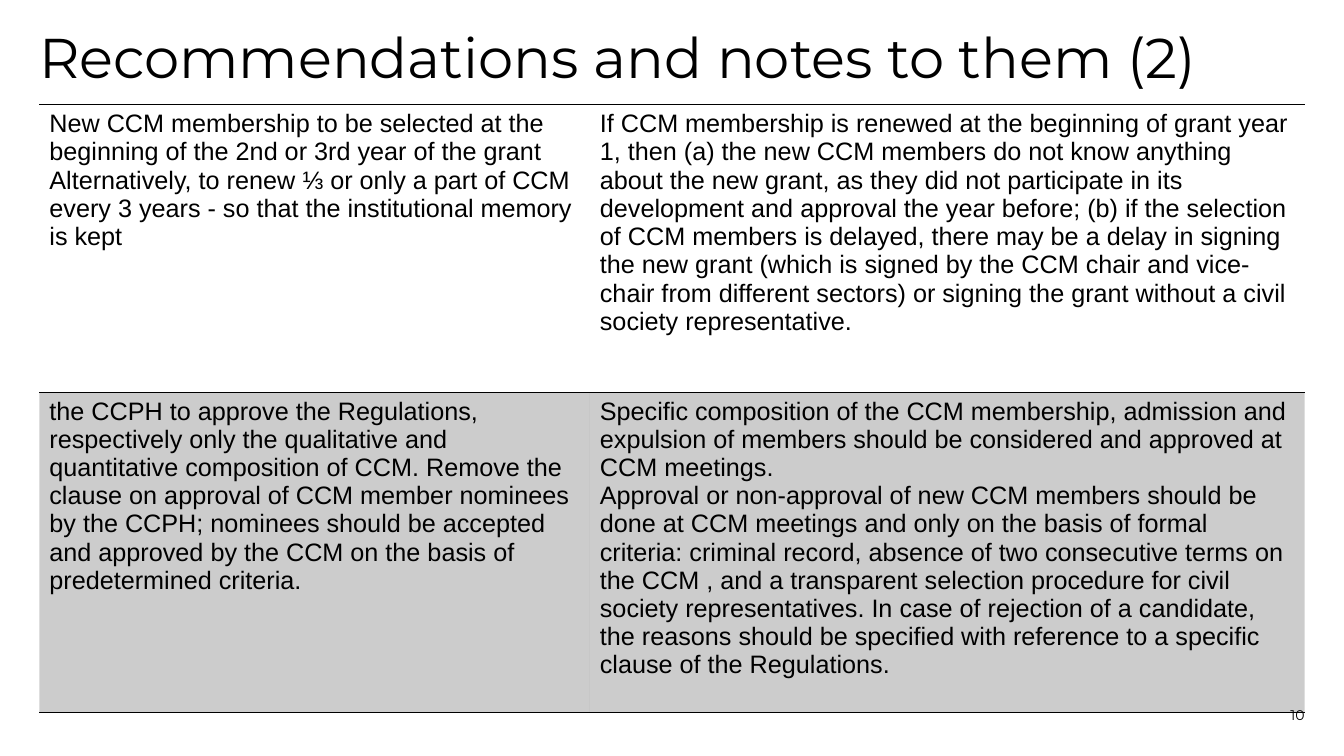
from lxml.etree import SubElement as Sub
from pptx import Presentation
from pptx.dml.color import RGBColor
from pptx.enum.text import MSO_ANCHOR as Anchor, PP_ALIGN as Align
from pptx.oxml.ns import qn
from pptx.util import Inches, Pt

BLACK = RGBColor(0, 0, 0)
HEAD, BODY = "Montserrat", "Arial"
LEFT, WIDE = 0.39, 12.55
COLS = [5.46, 7.09]
ROWS = [2.85, 3.18]

NOTES = [
    [
        ["New CCM membership to be selected at the beginning of the 2nd or 3rd "
         "year of the grant",
         "Alternatively, to renew ⅓ or only a part of CCM every 3 years - so that "
         "the institutional memory is kept"],
        ["If CCM membership is renewed at the beginning of grant year 1, then "
         "(a) the new CCM members do not know anything about the new grant, as "
         "they did not participate in its development and approval the year "
         "before; (b) if the selection of CCM members is delayed, there may be a "
         "delay in signing the new grant (which is signed by the CCM chair and "
         "vice-chair from different sectors) or signing the grant without a civil "
         "society representative."],
    ],
    [
        ["the CCPH to approve the Regulations, respectively only the qualitative "
         "and quantitative composition of CCM. Remove the clause on approval of "
         "CCM member nominees by the CCPH; nominees should be accepted and "
         "approved by the CCM on the basis of predetermined criteria."],
        ["Specific composition of the CCM membership, admission and expulsion of "
         "members should be considered and approved at CCM meetings.",
         "Approval or non-approval of new CCM members should be done at CCM "
         "meetings and only on the basis of formal criteria: criminal record, "
         "absence of two consecutive terms on the CCM , and a transparent "
         "selection procedure for civil society representatives. In case of "
         "rejection of a candidate, the reasons should be specified with "
         "reference to a specific clause of the Regulations."],
    ],
]


def write(frame, lines, font=BODY, size=18, align=Align.LEFT, space=1.0):
    """Fill a text frame with one paragraph per line."""
    frame.word_wrap = True
    for i, line in enumerate(lines):
        par = frame.add_paragraph() if i else frame.paragraphs[0]
        par.alignment, par.line_spacing = align, space
        run = par.add_run()
        run.text = line
        run.font.name, run.font.size = font, Pt(size)
        run.font.color.rgb = BLACK


def rule(cell, sides):
    """Draw black 1 pt borders on the given sides and none on the others."""
    props = cell._tc.get_or_add_tcPr()
    for i, side in enumerate("LRTB"):
        line = props.makeelement(qn("a:ln" + side), {"w": str(Pt(1))})
        props.insert(i, line)
        if side in sides:
            fill = Sub(line, qn("a:solidFill"))
            Sub(fill, qn("a:srgbClr"), val=str(BLACK))
        else:
            Sub(line, qn("a:noFill"))


def shade(cell, alpha):
    """Fill a cell with black of the given opacity in percent."""
    cell.fill.solid()
    cell.fill.fore_color.rgb = BLACK
    color = cell._tc.tcPr.find(".//" + qn("a:srgbClr"))
    Sub(color, qn("a:alpha"), val=str(alpha * 1000))


class Page:
    def __init__(self, deck):
        self.slide = deck.slides.add_slide(deck.slide_layouts[5])

    def frame(self, shape, anchor):
        frame = shape.text_frame
        frame.margin_left = frame.margin_right = 0
        frame.margin_top = frame.margin_bottom = 0
        frame.vertical_anchor = anchor
        return frame

    def title(self, text):
        shape = self.slide.shapes.title
        shape.left, shape.top = Inches(LEFT), Inches(0.3)
        shape.width, shape.height = Inches(WIDE), Inches(0.74)
        write(self.frame(shape, Anchor.TOP), [text], font=HEAD, size=40, space=0.9)

    def number(self, text):
        box = self.slide.shapes.add_textbox(
            Inches(11.96), Inches(6.78), Inches(0.98), Inches(0.4))
        write(self.frame(box, Anchor.BOTTOM), [text], font=HEAD, size=10,
              align=Align.RIGHT)

    def table(self, data):
        table = self.slide.shapes.add_table(
            len(ROWS), len(COLS), Inches(LEFT), Inches(1.04),
            Inches(WIDE), Inches(sum(ROWS))).table
        table.first_row = table.horz_banding = False
        for col, width in zip(table.columns, COLS):
            col.width = Inches(width)
        for r, (row, height) in enumerate(zip(data, ROWS)):
            table.rows[r].height = Inches(height)
            for c, lines in enumerate(row):
                cell = table.cell(r, c)
                write(cell.text_frame, lines)
                if r % 2:
                    shade(cell, 20)
                else:
                    cell.fill.background()
                rule(cell, "TB")


def main():
    deck = Presentation()
    deck.slide_width, deck.slide_height = Inches(13.33), Inches(7.5)
    page = Page(deck)

    # Heading and page number
    page.title("Recommendations and notes to them (2)")
    page.number("10")

    # Recommendations on the left, notes on the right
    page.table(NOTES)
    deck.save("out.pptx")


if __name__ == "__main__":
    main()
